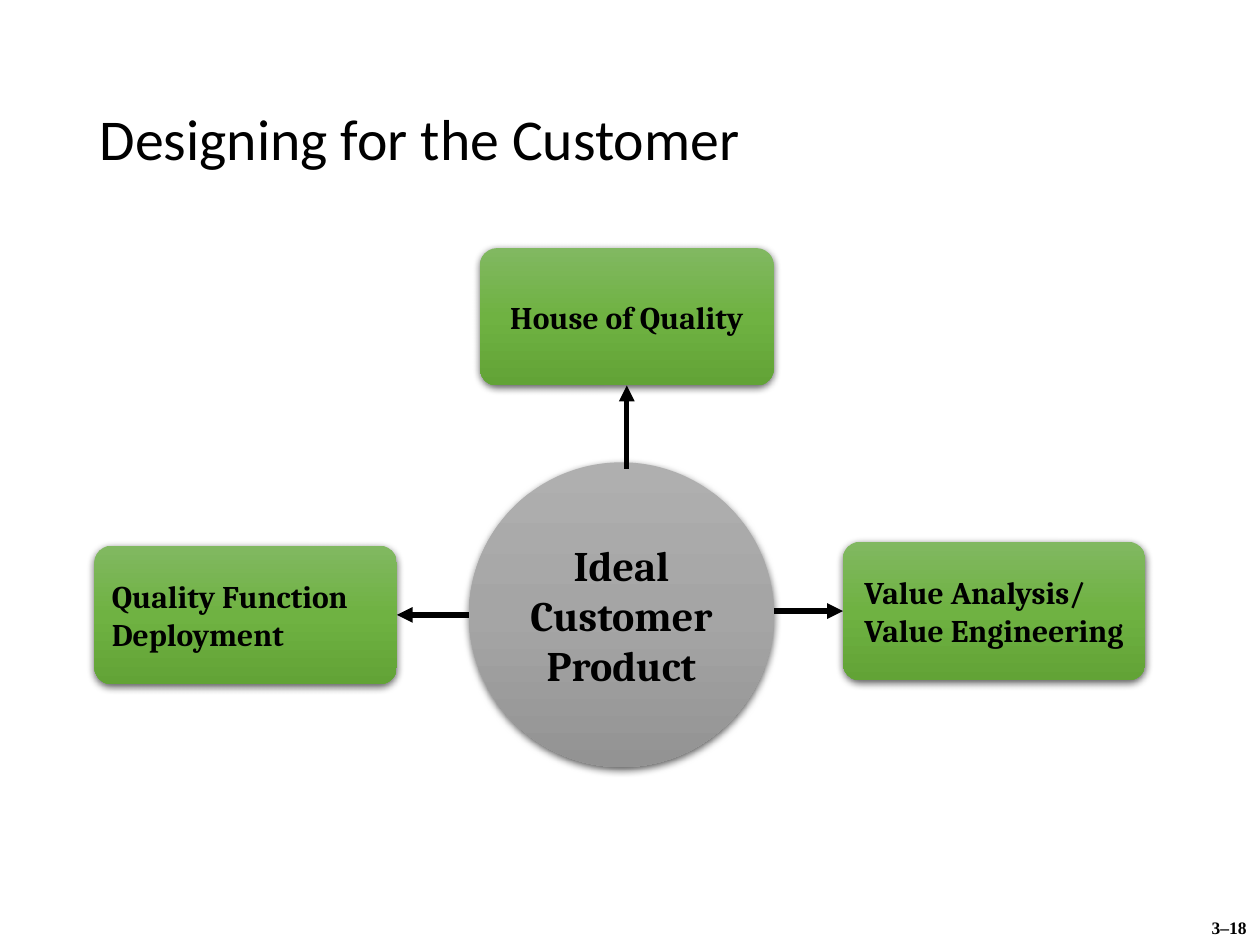
"""Build the slide that links the ideal customer product to its three design methods."""
import copy
import pptx
import pptx.util
import pptx.dml.color
import pptx.enum.shapes
import pptx.enum.text
import pptx.oxml
import pptx.oxml.ns

Pt = pptx.util.Pt
ALIGN = pptx.enum.text.PP_ALIGN
ANCHOR = pptx.enum.text.MSO_ANCHOR
SHAPE = pptx.enum.shapes.MSO_SHAPE
NS = 'xmlns:a="http://schemas.openxmlformats.org/drawingml/2006/main"'
SHADOW = (f'<a:effectLst {NS}><a:outerShdw blurRad="57150" dist="19050" dir="5400000" '
          'algn="ctr" rotWithShape="0"><a:srgbClr val="000000"><a:alpha val="63000"/>'
          '</a:srgbClr></a:outerShdw></a:effectLst>')
GREEN = ("81B861", "6FB242", "62A336")
GRAY = ("AFAFAF", "A5A5A5", "939393")


def rgb(value):
    return pptx.dml.color.RGBColor.from_string(value)


def write(shape, text, font="Cambria", size=18, bold=True, align=ALIGN.LEFT,
          margins=(7.2, 3.6), wrap=True, spacing=1.0):
    frame = shape.text_frame
    frame.word_wrap = wrap
    frame.vertical_anchor = ANCHOR.MIDDLE
    frame.margin_left = frame.margin_right = Pt(margins[0])
    frame.margin_top = frame.margin_bottom = Pt(margins[1])
    frame.text = text
    for paragraph in frame.paragraphs:
        paragraph.alignment = align
        paragraph.line_spacing = spacing
        paragraph.font.name = font
        paragraph.font.size = Pt(size)
        paragraph.font.bold = bold
        paragraph.font.color.rgb = rgb("000000")


deck = pptx.Presentation()
deck.slide_width, deck.slide_height = Pt(720), Pt(540)
slide = deck.slides.add_slide(deck.slide_layouts[5])
shapes = slide.shapes

title = shapes.title
title.left, title.top, title.width, title.height = Pt(49.7), Pt(28.8), Pt(620.6), Pt(104.4)
write(title, "Designing for the Customer", font="Calibri", size=33, bold=False, spacing=0.9)

page_number = shapes.add_textbox(Pt(684), Pt(520.6), Pt(36.7), Pt(19.4))
write(page_number, "3–18", font="Times New Roman", size=10, align=ALIGN.CENTER, wrap=False)

topics = [
    ("Ideal Customer Product", SHAPE.OVAL, (268, 264.2, 174.2, 174.2), GRAY,
     dict(size=24, align=ALIGN.CENTER, margins=(0, 0))),
    ("Quality Function\nDeployment", SHAPE.ROUNDED_RECTANGLE, (54, 311.8, 172.8, 79.2), GREEN, {}),
    ("Value Analysis/\nValue Engineering", SHAPE.ROUNDED_RECTANGLE,
     (481.7, 309.6, 172.8, 79.2), GREEN, dict(margins=(9.4, 3.6))),
    ("House of Quality", SHAPE.ROUNDED_RECTANGLE, (274.3, 141.8, 167.8, 78.5), GREEN,
     dict(align=ALIGN.CENTER)),
]
nodes = []
for text, outline, place, colours, text_format in topics:
    node = shapes.add_shape(outline, *map(Pt, place))
    if outline == SHAPE.ROUNDED_RECTANGLE:
        node.adjustments[0] = 0.124
    node.fill.gradient()
    node.fill.gradient_angle = 270
    stop_list = node._element.spPr.find(".//" + pptx.oxml.ns.qn("a:gsLst"))
    stop_list.append(copy.deepcopy(stop_list[0]))
    for stop, colour, position in zip(node.fill.gradient_stops, colours, (0, 0.5, 1)):
        stop.color.rgb = rgb(colour)
        stop.position = position
    node.line.fill.background()
    node._element.spPr.append(pptx.oxml.parse_xml(SHADOW))
    write(node, text, **text_format)
    nodes.append(node)

product, deployment, value_analysis, house = nodes
for method, side, start in [(deployment, 3, (268, 351.4)),
                            (value_analysis, 1, (442.2, 349.2)),
                            (house, 2, (358.2, 267.8))]:
    arrow = shapes.add_connector(pptx.enum.shapes.MSO_CONNECTOR.STRAIGHT,
                                 *map(Pt, start), *map(Pt, start))
    arrow.end_connect(method, side)
    arrow.line.color.rgb = rgb("000000")
    arrow.line.width = Pt(3)
    arrow.line._get_or_add_ln().append(
        pptx.oxml.parse_xml(f'<a:tailEnd {NS} type="triangle"/>'))
    arrow._element.spPr.append(pptx.oxml.parse_xml(f"<a:effectLst {NS}/>"))

deck.save("out.pptx")
